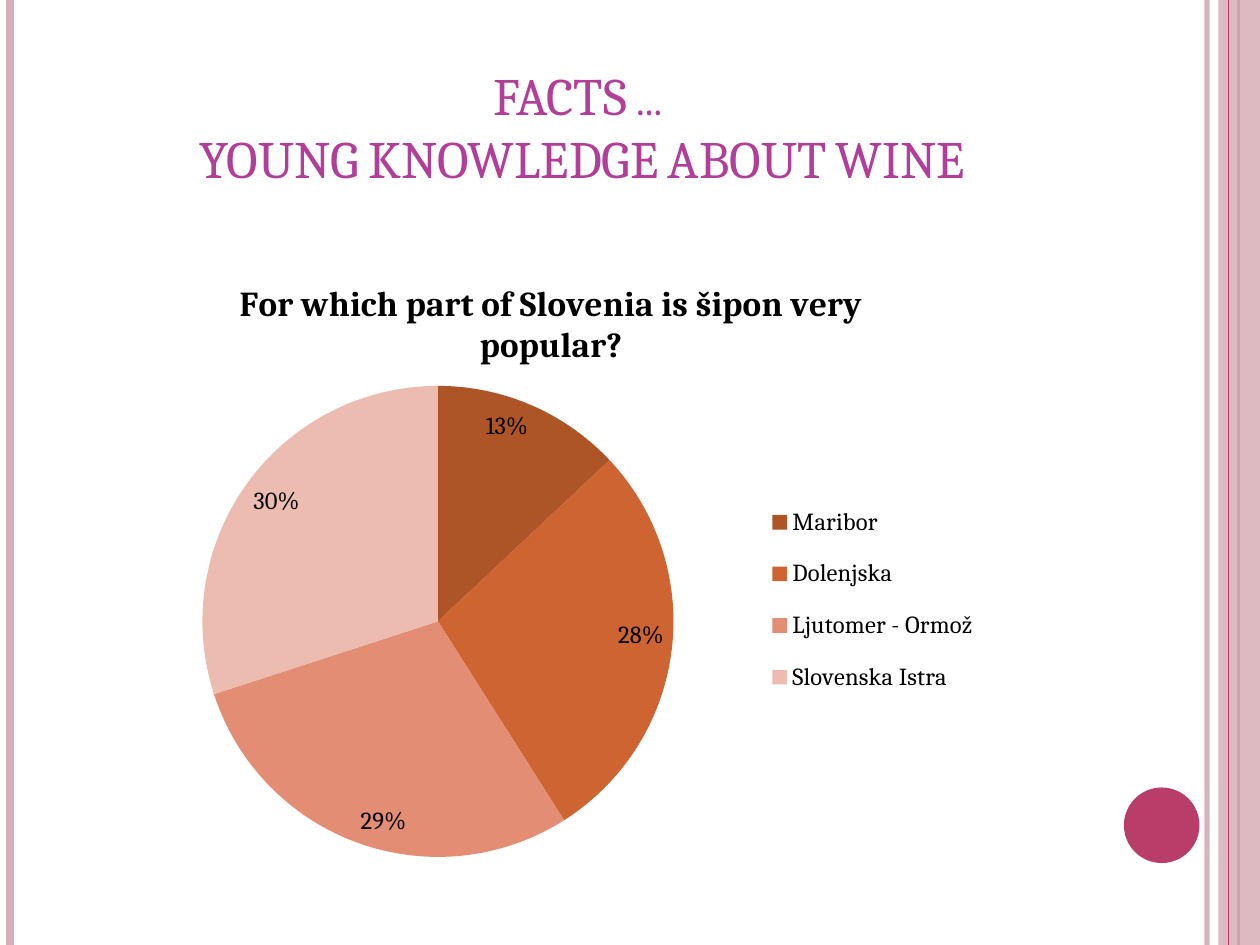
import pptx
import pptx.chart.data
import pptx.dml.color
import pptx.enum.chart
import pptx.enum.shapes
import pptx.enum.text
import pptx.oxml.ns
import pptx.oxml.xmlchemy
import pptx.util
from pptx.util import Inches

FONT = "Cambria"
COLOURS = {
    "rose": "D8AFB9", "wine": "B83D68", "title": "B13F9A", "text": "000000",
    "Maribor": "AE5528", "Dolenjska": "CE6431",
    "Ljutomer - Ormož": "E38D75", "Slovenska Istra": "ECBCB0",
}
SHARES = {"Maribor": 13, "Dolenjska": 28, "Ljutomer - Ormož": 29, "Slovenska Istra": 30}


def rgb(name):
    return pptx.dml.color.RGBColor.from_string(COLOURS[name])


def make_node(tag, value=None):
    node = pptx.oxml.xmlchemy.OxmlElement(tag)
    if value is not None:
        node.set("val", str(value))
    return node


def style(font, colour, **values):
    for key, value in {"name": FONT, **values}.items():
        setattr(font, key, value)
    font.color.rgb = rgb(colour)


def fade(fill, percent):
    """Make a solid fill partly see-through."""
    colour = fill._xPr.find(".//" + pptx.oxml.ns.qn("a:srgbClr"))
    colour.append(make_node("a:alpha", percent * 1000))


def add_rule(slide, x, width, colour, alpha=None):
    """Draw a full-height vertical line."""
    rule = slide.shapes.add_connector(
        pptx.enum.shapes.MSO_CONNECTOR.STRAIGHT, Inches(x), 0, Inches(x), Inches(7.5))
    rule.line.width = pptx.util.Pt(width)
    rule.line.color.rgb = rgb(colour)
    if alpha:
        fade(rule.line.fill, alpha)
    rule._element.spPr.append(make_node("a:effectLst"))


def add_block(slide, kind, box, colour, alpha=None):
    block = slide.shapes.add_shape(kind, *map(Inches, box))
    block.shadow.inherit = False
    block.fill.solid()
    block.fill.fore_color.rgb = rgb(colour)
    block.line.fill.background()
    if alpha:
        fade(block.fill, alpha)


def set_title(slide, text):
    title = slide.shapes.title
    title.left, title.top, title.width, title.height = map(Inches, (0.5, 0.3, 8.17, 1.25))
    frame = title.text_frame
    frame.word_wrap = True
    frame.vertical_anchor = pptx.enum.text.MSO_ANCHOR.BOTTOM
    frame.text = text
    para = frame.paragraphs[0]
    para.alignment = pptx.enum.text.PP_ALIGN.CENTER
    for run in para.runs:
        style(run.font, "title", size=pptx.util.Pt(30))
        run.font._element.set("cap", "small")


def make_layout(x, y, w, h, inner=False):
    """Build a manual chart layout in fractions of the chart area."""
    layout = make_node("c:layout")
    manual = make_node("c:manualLayout")
    layout.append(manual)
    values = {"layoutTarget": "inner"} if inner else {}
    values |= {"xMode": "edge", "yMode": "edge", "x": x, "y": y, "w": w, "h": h}
    for tag, value in values.items():
        manual.append(make_node("c:" + tag, value))
    return layout


def place(parent, index, layout):
    for old in parent.findall(pptx.oxml.ns.qn("c:layout")):
        parent.remove(old)
    parent.insert(index, layout)


def add_pie(slide, heading, shares):
    data = pptx.chart.data.CategoryChartData(number_format="0")
    data.categories = list(shares)
    data.add_series("Series 1", list(shares.values()))
    chart = slide.shapes.add_chart(
        pptx.enum.chart.XL_CHART_TYPE.PIE, *map(Inches, (0.78, 2.03, 7.19, 4.92)), data).chart
    style(chart.font, "text", size=pptx.util.Pt(10))

    chart.has_title = True
    frame = chart.chart_title.text_frame
    frame.text = heading
    style(frame.paragraphs[0].runs[0].font, "text", size=pptx.util.Pt(20), bold=True)

    chart.has_legend = True
    legend = chart.legend
    legend.position = pptx.enum.chart.XL_LEGEND_POSITION.RIGHT
    legend.include_in_layout = False
    style(legend.font, "text", size=pptx.util.Pt(14))

    plot = chart.plots[0]
    plot.vary_by_categories = True
    for index, name in enumerate(shares):
        fill = plot.series[0].points[index].format.fill
        fill.solid()
        fill.fore_color.rgb = rgb(name)
    plot.has_data_labels = True
    labels = plot.data_labels
    style(labels.font, "text", size=pptx.util.Pt(14))
    for key, value in {
        "show_percentage": True, "show_value": False,
        "number_format": "0%", "number_format_is_linked": False,
        "position": pptx.enum.chart.XL_LABEL_POSITION.INSIDE_END,
    }.items():
        setattr(labels, key, value)

    area = chart._chartSpace.chart.plotArea
    place(area, 0, make_layout(0.115, 0.21, 0.52, 0.76, inner=True))
    place(legend._element, 1, make_layout(0.73, 0.37, 0.25, 0.37))


def main():
    deck = pptx.Presentation()
    deck.slide_width, deck.slide_height = Inches(10), Inches(7.5)
    slide = deck.slides.add_slide(deck.slide_layouts[5])
    shape = pptx.enum.shapes.MSO_SHAPE
    add_rule(slide, 9.58, 3, "rose", 93)
    add_rule(slide, 0.08, 4.5, "rose")
    add_rule(slide, 9.83, 1.5, "wine")
    add_block(slide, shape.RECTANGLE, (9.67, 0, 0.33, 7.5), "rose", 87)
    add_rule(slide, 9.75, 0.75, "wine")
    add_block(slide, shape.OVAL, (8.92, 6.25, 0.6, 0.6), "wine")
    set_title(slide, "FACTS ...\v YOUNG KNOWLEDGE ABOUT WINE")
    add_pie(slide, "For which part of Slovenia is šipon very popular?", SHARES)
    deck.save("out.pptx")


if __name__ == "__main__":
    main()
